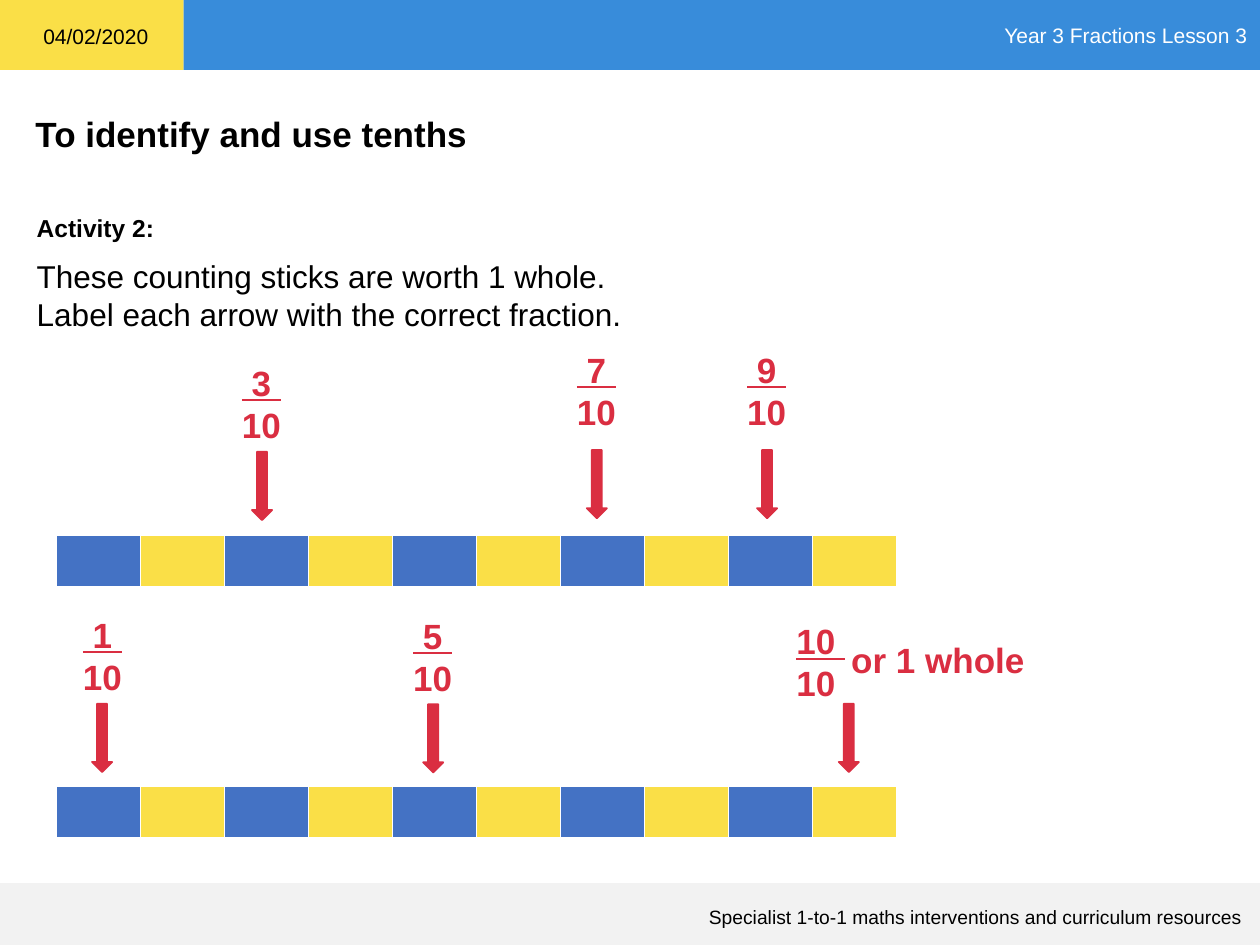
"""Build the tenths activity slide with two counting sticks."""
from pptx import Presentation
from pptx.dml.color import RGBColor
from pptx.enum.shapes import MSO_SHAPE
from pptx.enum.text import MSO_ANCHOR, PP_ALIGN
from pptx.util import Pt

RECT, ARROW = MSO_SHAPE.RECTANGLE, MSO_SHAPE.DOWN_ARROW
LEFT, RIGHT = PP_ALIGN.LEFT, PP_ALIGN.RIGHT
TOP, MIDDLE = MSO_ANCHOR.TOP, MSO_ANCHOR.MIDDLE
COLORS = {
    "yellow": "FADF47", "sky": "388CDA", "grey": "F2F2F2", "blue": "4472C4",
    "red": "DA2E41", "black": "000000", "white": "FFFFFF",
}


def write(text, box=None, shape=None, size=12, color="black", bold=False,
          align=LEFT, anchor=TOP, wrap=True, under=False):
    if shape is None:
        shape = slide.shapes.add_textbox(*map(Pt, box))
    frame = shape.text_frame
    frame.word_wrap = wrap
    frame.vertical_anchor = anchor
    frame.text = text
    for row, para in enumerate(frame.paragraphs):
        para.alignment = align
        for run in para.runs:
            font = run.font
            font.name, font.size, font.bold = "Arial", Pt(size), bold
            font.underline = under and row == 0
            font.color.rgb = RGBColor.from_string(COLORS[color])


def draw(kind, box, color, line=False):
    shape = slide.shapes.add_shape(kind, *map(Pt, box))
    shape.shadow.inherit = False
    tint = RGBColor.from_string(COLORS[color])
    shape.fill.solid()
    shape.fill.fore_color.rgb = tint
    if line:
        shape.line.color.rgb = tint
        shape.line.width = Pt(1)
    else:
        shape.line.fill.background()
    return shape


deck = Presentation()
deck.slide_width, deck.slide_height = Pt(720), Pt(540)
slide = deck.slides.add_slide(deck.slide_layouts[6])

draw(RECT, (0, 0, 105, 40), "yellow")
banner = draw(RECT, (105, 0, 615, 40), "sky")
write("Year 3 Fractions Lesson 3", shape=banner, color="white",
      align=RIGHT, anchor=MIDDLE)
draw(RECT, (0, 504.7, 720, 35.3), "grey")
write("Specialist 1-to-1 maths interventions and curriculum resources",
      (30.2, 514, 686.9, 20), size=11, align=RIGHT, anchor=MIDDLE)
write("To identify and use tenths", (13.2, 60.5, 703.4, 31.5), size=20, bold=True)
write("04/02/2020", (17.7, 9.6, 74.9, 21.8), wrap=False)
write("Activity 2:", (13.9, 118.3, 82, 24.2), size=14, bold=True, wrap=False)
write("These counting sticks are worth 1 whole.\n"
      "Label each arrow with the correct fraction.",
      (13.9, 143.3, 517, 51), size=18)

marks = [
    (" 3 ", 131.1, 203, 144, 258.2),
    (" 7 ", 322.6, 195.6, 335.3, 257.2),
    (" 9 ", 419.8, 195.6, 432.6, 257.2),
    (" 1 ", 40.3, 347, 52.6, 402.2),
    (" 5 ", 229, 347.6, 241.8, 402.4),
    ("10 ", 448, 350.6, 479.3, 402.2),
]
for top, x, y, tip, drop in marks:
    wide = 42.5 if top == "10 " else 36.7
    write(top + "\n10", (x, y, wide, 55.7), size=20, color="red",
          bold=True, wrap=False, under=True)
    draw(ARROW, (tip, drop, 11.5, 39), "red", line=True)
write("or 1 whole", (479.3, 361.5, 114.5, 31.5), size=20, color="red",
      bold=True, wrap=False)

for y in (306, 449.3):
    stick = slide.shapes.add_table(1, 10, Pt(32.4), Pt(y), Pt(480), Pt(29.5)).table
    for part in range(10):
        fill = stick.cell(0, part).fill
        fill.solid()
        tone = "yellow" if part % 2 else "blue"
        fill.fore_color.rgb = RGBColor.from_string(COLORS[tone])

deck.save("out.pptx")
